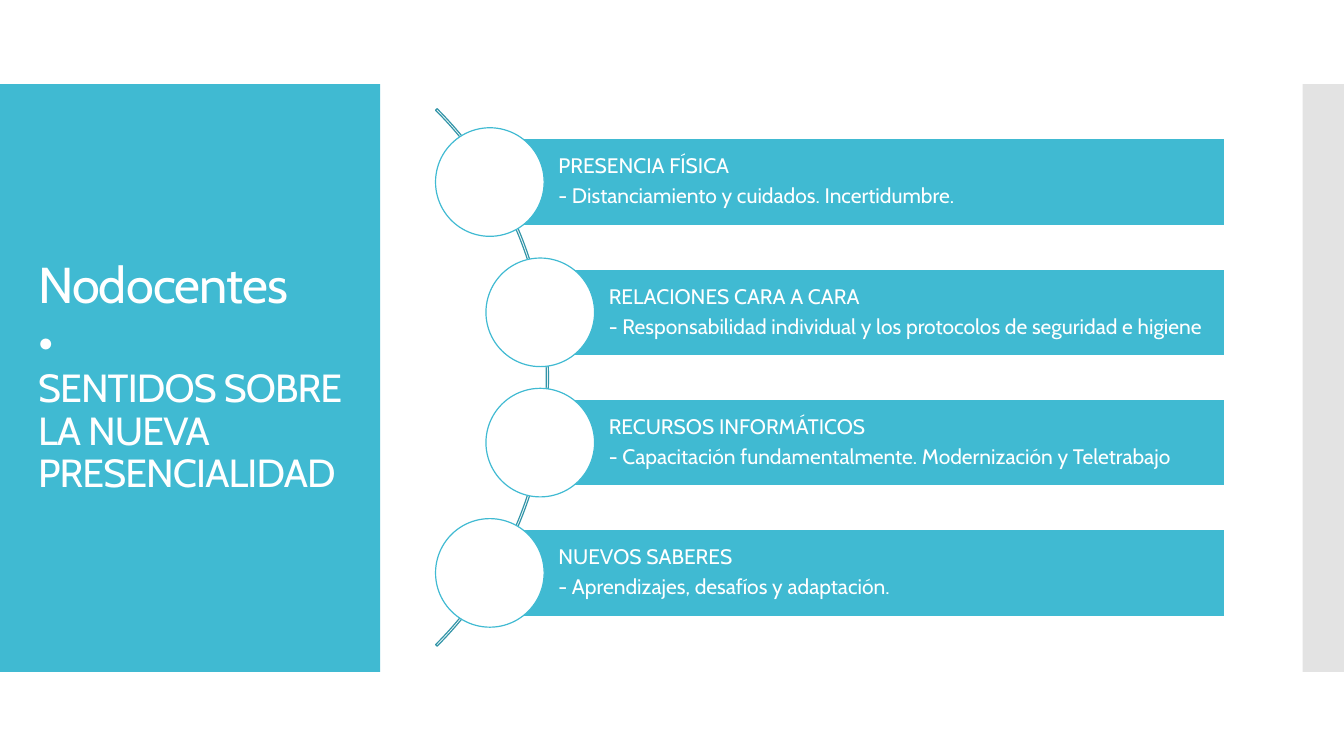
"""Slide on what the return to on-site work means to non-teaching staff."""
from dataclasses import dataclass

import pptx
import pptx.dml.color
import pptx.enum.shapes
import pptx.enum.text
import pptx.util

SHAPE = pptx.enum.shapes.MSO_SHAPE
Inches = pptx.util.Inches
Pt = pptx.util.Pt


@dataclass(frozen=True)
class Theme:
    """Colours, font and type sizes of the slide."""
    accent: str = "40BAD2"
    arc: str = "3395A8"
    edge: str = "E3E3E3"
    white: str = "FFFFFF"
    font: str = "Cabin"
    title: int = 36
    subtitle: int = 28
    body: int = 15
    line: float = 0.85
    spacing: float = 0.9


THEME = Theme()
WIDTH, HEIGHT = 13.33, 7.5
TOPICS = [
    ("PRESENCIA FÍSICA", "- Distanciamiento y cuidados. Incertidumbre."),
    ("RELACIONES CARA A CARA",
     "- Responsabilidad individual y los protocolos de seguridad e higiene"),
    ("RECURSOS INFORMÁTICOS",
     "- Capacitación fundamentalmente. Modernización y Teletrabajo"),
    ("NUEVOS SABERES", "- Aprendizajes, desafíos y adaptación."),
]


def rgb(value):
    """Return the colour object for a hex value."""
    return pptx.dml.color.RGBColor.from_string(value)


def add_shape(s, kind, box, fill=None, line=None):
    """Add a flat preset shape in a box given in inches."""
    sp = s.shapes.add_shape(kind, *map(Inches, box))
    sp.shadow.inherit = False
    if fill:
        sp.fill.solid()
        sp.fill.fore_color.rgb = rgb(fill)
    else:
        sp.fill.background()
    if line:
        sp.line.color.rgb = rgb(line)
        sp.line.width = Pt(THEME.line)
    else:
        sp.line.fill.background()
    return sp


def setup_text(sp, insets):
    """Prepare a wrapped, vertically centred text frame."""
    tf = sp.text_frame
    tf.word_wrap = True
    tf.vertical_anchor = pptx.enum.text.MSO_ANCHOR.MIDDLE
    tf.margin_left, tf.margin_top, tf.margin_right, tf.margin_bottom = map(Inches, insets)
    return tf


def style_paragraph(p, size):
    """Apply the common font, colour, alignment and line spacing."""
    p.font.name = THEME.font
    p.font.size = Pt(size)
    p.font.color.rgb = rgb(THEME.white)
    p.alignment = pptx.enum.text.PP_ALIGN.LEFT
    p.line_spacing = THEME.spacing


def add_title_panel(s, box):
    """Draw the coloured panel with the title inside it."""
    x, y, w, h = box
    add_shape(s, SHAPE.RECTANGLE, box, THEME.accent)
    sp = s.shapes.add_textbox(*map(Inches, (x + 0.28, y + 0.4, w - 0.55, h - 0.8)))
    p = setup_text(sp, (0.1, 0.05, 0.1, 0.05)).paragraphs[0]
    style_paragraph(p, THEME.title)
    lines = [("Nodocentes", THEME.title), ("•", THEME.title),
             ("SENTIDOS SOBRE LA NUEVA PRESENCIALIDAD", THEME.subtitle)]
    for i, (text, size) in enumerate(lines):
        if i:
            p.add_line_break()
        r = p.add_run()
        r.text = text
        r.font.size = Pt(size)
        r.font._element.set("spc", "-60")


def add_topic(s, box, topic):
    """Draw one bar with its text and the circle at its left end."""
    x, y, w, h = box
    bar, circle = h * 2 / 3, h * 5 / 6
    sp = add_shape(s, SHAPE.RECTANGLE,
                   (x + circle / 2, y + (h - bar) / 2, w - circle / 2, bar),
                   THEME.accent, THEME.white)
    tf = setup_text(sp, (0.68, 0.04, 0.04, 0.04))
    tf.text = "\n".join(topic)
    for p in tf.paragraphs:
        style_paragraph(p, THEME.body)
        p.space_after = Pt(THEME.body * 0.35)
    add_shape(s, SHAPE.OVAL, (x, y + (h - circle) / 2, circle, circle),
              THEME.white, THEME.accent)


def add_topic_list(s, box):
    """Draw the arc and the topics that follow its curve."""
    x, y, w, h = box
    size = 7.54
    arc = add_shape(s, SHAPE.BLOCK_ARC,
                    (x - 6.42, y + (h - size) / 2, size, size), line=THEME.arc)
    for i, value in enumerate((189, 27, 0.00286)):
        arc.adjustments[i] = value
    row = h / len(TOPICS)
    for i, topic in enumerate(TOPICS):
        indent = 0.5 if 0 < i < len(TOPICS) - 1 else 0
        add_topic(s, (x + indent, y + i * row, w - indent, row), topic)


def main():
    """Build and save the slide."""
    prs = pptx.Presentation()
    prs.slide_width, prs.slide_height = Inches(WIDTH), Inches(HEIGHT)
    s = prs.slides.add_slide(prs.slide_layouts[6])
    top, height = HEIGHT / 9, HEIGHT * 7 / 9
    add_title_panel(s, (0, top, 3.77, height))
    add_shape(s, SHAPE.RECTANGLE, (WIDTH - 0.41, top, 0.41, height), THEME.edge)
    add_topic_list(s, (4.32, 1.16, 7.83, 5.17))
    prs.save("out.pptx")


if __name__ == "__main__":
    main()
